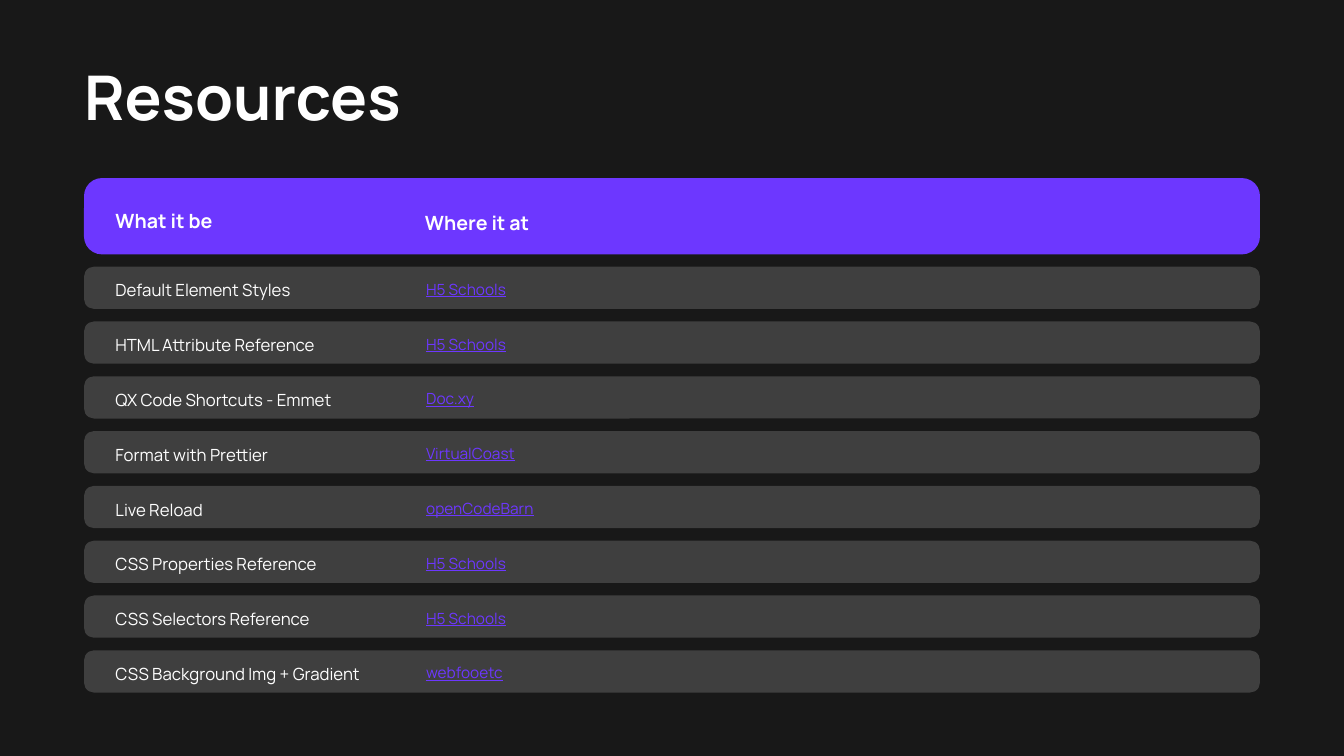
from dataclasses import dataclass

from pptx import Presentation
from pptx import util as u
from pptx.dml.color import RGBColor
from pptx.enum import shapes, text


@dataclass(frozen=True)
class Theme:
    font: str = "Manrope"
    background: str = "181818"
    row: str = "3F3F3F"
    accent: str = "6D37FF"
    white: str = "FFFFFF"
    title_size: int = 44
    header_size: int = 14
    topic_size: int = 12
    link_size: int = 11


# Layout in points
LEFT, WIDTH = 60, 840
TOPIC_LEFT, TOPIC_WIDTH, LONG_TOPIC_WIDTH = 82.5, 168.5, 193
SITE_LEFT, SITE_WIDTH = 304.4, 580
HEADER_TOP, HEADER_HEIGHT = 127.2, 54.5
ROWS_TOP, ROW_PITCH, ROW_HEIGHT = 190.45, 39.15, 30.2
TEXT_OFFSET = 6.8
LONG_TOPIC = 25  # characters

RESOURCES = [
    ("Default Element Styles", "H5 Schools"),
    ("HTML Attribute Reference", "H5 Schools"),
    ("QX Code Shortcuts - Emmet", "Doc.xy"),
    ("Format with Prettier", "VirtualCoast"),
    ("Live Reload", "openCodeBarn"),
    ("CSS Properties Reference", "H5 Schools"),
    ("CSS Selectors Reference", "H5 Schools"),
    ("CSS Background Img + Gradient", "webfooetc"),
]


def write_text(frame, content, *, font, size, color, bold=False,
               underline=False, spacing=1.2):
    paragraph = frame.paragraphs[0]
    paragraph.alignment = text.PP_ALIGN.LEFT
    paragraph.line_spacing = spacing
    run = paragraph.add_run()
    run.text = content
    run.font.name = font
    run.font.size = u.Pt(size)
    run.font.bold = bold
    run.font.underline = underline
    run.font.color.rgb = RGBColor.from_string(color)


class SlideBuilder:
    def __init__(self, slide, theme):
        self.slide = slide
        self.theme = theme
        fill = slide.background.fill
        fill.solid()
        fill.fore_color.rgb = RGBColor.from_string(theme.background)

    def panel(self, kind, left, top, width, height, color):
        shape = self.slide.shapes.add_shape(
            kind, u.Pt(left), u.Pt(top), u.Pt(width), u.Pt(height))
        shape.shadow.inherit = False
        shape.fill.solid()
        shape.fill.fore_color.rgb = RGBColor.from_string(color)
        shape.line.fill.background()
        return shape

    def bar(self, top, height, color):
        shape = self.panel(shapes.MSO_SHAPE.ROUNDED_RECTANGLE,
                           LEFT, top, WIDTH, height, color)
        shape.adjustments[0] = 0.235

    def label(self, content, left, top, width, height, fill=None,
              anchor=text.MSO_ANCHOR.TOP, **style):
        if fill:
            shape = self.panel(shapes.MSO_SHAPE.RECTANGLE,
                               left, top, width, height, fill)
        else:
            shape = self.slide.shapes.add_textbox(
                u.Pt(left), u.Pt(top), u.Pt(width), u.Pt(height))
        frame = shape.text_frame
        frame.word_wrap = True
        frame.vertical_anchor = anchor
        frame.margin_left = frame.margin_right = 0
        frame.margin_top = frame.margin_bottom = 0
        write_text(frame, content, font=self.theme.font, **style)

    def title(self, content):
        self.label(content, LEFT, 48, WIDTH, 48.2,
                   anchor=text.MSO_ANCHOR.MIDDLE, spacing=0.9, bold=True,
                   size=self.theme.title_size, color=self.theme.white)

    def header(self, topic, site):
        self.bar(HEADER_TOP, HEADER_HEIGHT, self.theme.accent)
        style = dict(size=self.theme.header_size, color=self.theme.white,
                     bold=True)
        self.label(topic, TOPIC_LEFT, 145.9, 93.6, 17, **style)
        self.label(site, SITE_LEFT - 0.9, 147.2, 111.6, 17, **style)

    def row(self, index, topic, site):
        top = ROWS_TOP + index * ROW_PITCH
        topic_width = (LONG_TOPIC_WIDTH if len(topic) > LONG_TOPIC
                       else TOPIC_WIDTH)
        self.bar(top, ROW_HEIGHT, self.theme.row)
        self.label(topic, TOPIC_LEFT, top + TEXT_OFFSET, topic_width, 14.4,
                   fill=self.theme.row, size=self.theme.topic_size,
                   color=self.theme.white)
        self.label(site, SITE_LEFT, top + TEXT_OFFSET, SITE_WIDTH, 13.4,
                   fill=self.theme.row, size=self.theme.link_size,
                   color=self.theme.accent, underline=True)


def main():
    presentation = Presentation()
    presentation.slide_width = u.Pt(960)
    presentation.slide_height = u.Pt(540)
    slide = presentation.slides.add_slide(presentation.slide_layouts[6])
    builder = SlideBuilder(slide, Theme())

    # Title
    builder.title("Resources")

    # Header bar
    builder.header("What it be", "Where it at")

    # Resource rows
    for index, (topic, site) in enumerate(RESOURCES):
        builder.row(index, topic, site)

    presentation.save("out.pptx")


if __name__ == "__main__":
    main()
